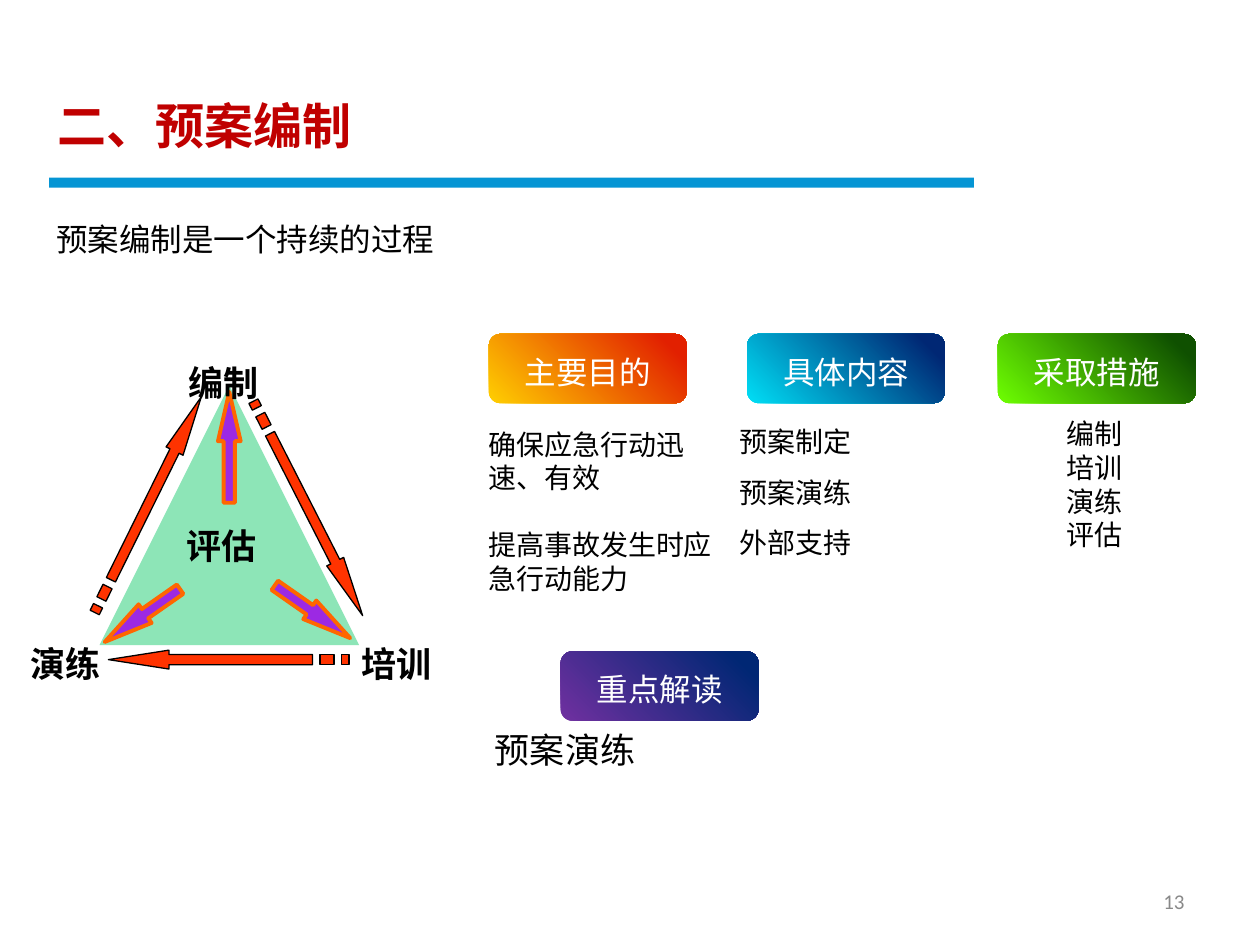
import pptx
import pptx.dml.color
import pptx.enum.shapes
import pptx.enum.text
import pptx.oxml.ns
import pptx.util
from lxml import etree

Inches, Pt = pptx.util.Inches, pptx.util.Pt
SHAPE = pptx.enum.shapes.MSO_SHAPE
ALIGN = pptx.enum.text.PP_ALIGN
ANCHOR = pptx.enum.text.MSO_ANCHOR
CJK = "Noto Sans CJK SC"

# Text boxes: lines, (left, top, width, height), formatting
TEXTS = [
    (["预案编制是一个持续的过程"], (0.35, 1.55, 4.33, 0.55), dict(size=18, spacing=1.5)),
    (["预案演练"], (3.83, 5.57, 2.89, 0.64), dict(size=20, spacing=1.5)),
    (["确保应急行动迅速、有效", "提高事故发生时应急行动能力"],
     (3.78, 3.34, 1.99, 1.45), dict(size=16, gap=19)),
    (["预案制定", "预案演练", "外部支持"],
     (5.77, 3.19, 2.03, 1.31), dict(size=16, spacing=1.5)),
    (["编制", "培训", "演练", "评估"],
     (7.84, 3.26, 1.69, 1.18), dict(size=16, align=ALIGN.CENTER)),
    (["二、预案编制"], (0.36, 0.6, 2.83, 0.79),
     dict(size=28, color="C00000", bold=True, anchor=ANCHOR.MIDDLE)),
    (["13"], (7.17, 6.95, 2.33, 0.4),
     dict(size=12, color="898989", font="Calibri", align=ALIGN.RIGHT, anchor=ANCHOR.MIDDLE)),
]
# Headings: text, left, top, gradient start, gradient end
HEADINGS = [
    ("主要目的", 3.88, 2.65, "FFCF01", "E22000"),
    ("具体内容", 5.93, 2.65, "00DFF6", "002774"),
    ("采取措施", 7.92, 2.65, "6EFF01", "0F5000"),
    ("重点解读", 4.45, 5.17, "7030A0", "002774"),
]
# Triangle labels: text, box, line spacing
CYCLE_LABELS = [
    ("评估", (1.26, 4.11, 0.99, 0.41), 1),
    ("编制", (1.28, 2.65, 0.99, 0.41), 1.5),
    ("演练", (0.12, 4.88, 0.8, 0.56), 1.5),
    ("培训", (2.71, 4.88, 0.87, 0.56), 1.5),
]
# Arrows from the centre to the corners: box, rotation
INNER_ARROWS = [
    ((1.73, 3.11, 0.18, 0.88), 0),
    ((2.39, 4.49, 0.18, 0.73), 125),
    ((1.04, 4.52, 0.18, 0.73), 235),
]
# Arrows along the sides: left, top, rotation
SIDE_ARROWS = [(1.49, 3.96, 63), (0.86, 5.16, 180), (0.22, 3.93, 296.3)]
# Outline of a side arrow pointing right, in thousandths of an inch
ARROW_PARTS = [
    [(290, 35), (1430, 35), (1430, 0), (1910, 75), (1430, 150), (1430, 115), (290, 115)],
    [(120, 35), (230, 35), (230, 115), (120, 115)],
    [(0, 35), (60, 35), (60, 115), (0, 115)],
]


def rgb(value):
    return pptx.dml.color.RGBColor.from_string(value)


def write(shape, lines, size, color="000000", font=CJK, bold=False,
          align=ALIGN.LEFT, anchor=ANCHOR.TOP, spacing=1, gap=0):
    frame = shape.text_frame
    frame.text = "\n".join(lines)
    frame.word_wrap = True
    frame.vertical_anchor = anchor
    for index, paragraph in enumerate(frame.paragraphs):
        paragraph.alignment = align
        paragraph.line_spacing = float(spacing)
        paragraph.space_before = Pt(gap if index else 0)
        # Keep punctuation inside the box instead of hanging past its edge
        paragraph._p.get_or_add_pPr().set("hangingPunct", "0")
        for run in paragraph.runs:
            run.font.size = Pt(size)
            run.font.bold = bold
            run.font.color.rgb = rgb(color)
            run.font.name = font
            east_asian = etree.SubElement(run.font._element, pptx.oxml.ns.qn("a:ea"))
            east_asian.set("typeface", font)


def add_text(shapes, lines, box, **style):
    write(shapes.add_textbox(*map(Inches, box)), lines, **style)


def paint(shape, fill, line=None, width=0):
    shape.shadow.inherit = False
    shape.fill.solid()
    shape.fill.fore_color.rgb = rgb(fill)
    if line:
        shape.line.color.rgb = rgb(line)
        shape.line.width = Pt(width)
    else:
        shape.line.fill.background()


def add_shape(shapes, kind, box, *colors):
    shape = shapes.add_shape(kind, *map(Inches, box))
    paint(shape, *colors)
    return shape


def add_heading(shapes, text, left, top, start, end):
    shape = add_shape(shapes, SHAPE.ROUNDED_RECTANGLE, (left, top, 1.57, 0.55), start)
    shape.fill.gradient()
    shape.fill.gradient_angle = 45
    for stop, position, color in zip(shape.fill.gradient_stops, (0, 0.9), (start, end)):
        stop.position = position
        stop.color.rgb = rgb(color)
    write(shape, [text], 18, "FFFFFF", align=ALIGN.CENTER, anchor=ANCHOR.MIDDLE)
    shape.text_frame.margin_top = Inches(0.1)


def add_side_arrow(shapes, left, top, rotation):
    builder = shapes.build_freeform(*ARROW_PARTS[0][0], scale=Inches(1) / 1000)
    for index, points in enumerate(ARROW_PARTS):
        if index:
            builder.move_to(*points[0])
        builder.add_line_segments(points[1:], close=True)
    shape = builder.convert_to_shape(Inches(left), Inches(top))
    paint(shape, "FF3300", "000000", 0.75)
    shape.rotation = rotation


def add_cycle(shapes):
    """Draw the triangle with its arrows and labels."""
    add_shape(shapes, SHAPE.ISOSCELES_TRIANGLE, (0.79, 3.06, 2.06, 2.06), "8DE5B7")
    for box, rotation in INNER_ARROWS:
        arrow = add_shape(shapes, SHAPE.UP_ARROW, box, "9C29E3", "FF6600", 2.25)
        arrow.adjustments[0] = 0.5
        arrow.adjustments[1] = 2.177
        arrow.rotation = rotation
    for text, box, spacing in CYCLE_LABELS:
        add_text(shapes, [text], box, size=20, bold=True, align=ALIGN.CENTER, spacing=spacing)
    for arrow in SIDE_ARROWS:
        add_side_arrow(shapes, *arrow)


def main():
    presentation = pptx.Presentation()
    presentation.slide_width, presentation.slide_height = Inches(10), Inches(7.5)
    slide = presentation.slides.add_slide(presentation.slide_layouts[6])
    add_shape(slide.shapes, SHAPE.RECTANGLE, (0.39, 1.41, 7.34, 0.08), "0595D4")
    add_cycle(slide.shapes.add_group_shape().shapes)
    for heading in HEADINGS:
        add_heading(slide.shapes, *heading)
    for lines, box, style in TEXTS:
        add_text(slide.shapes, lines, box, **style)
    presentation.save("out.pptx")


if __name__ == "__main__":
    main()
